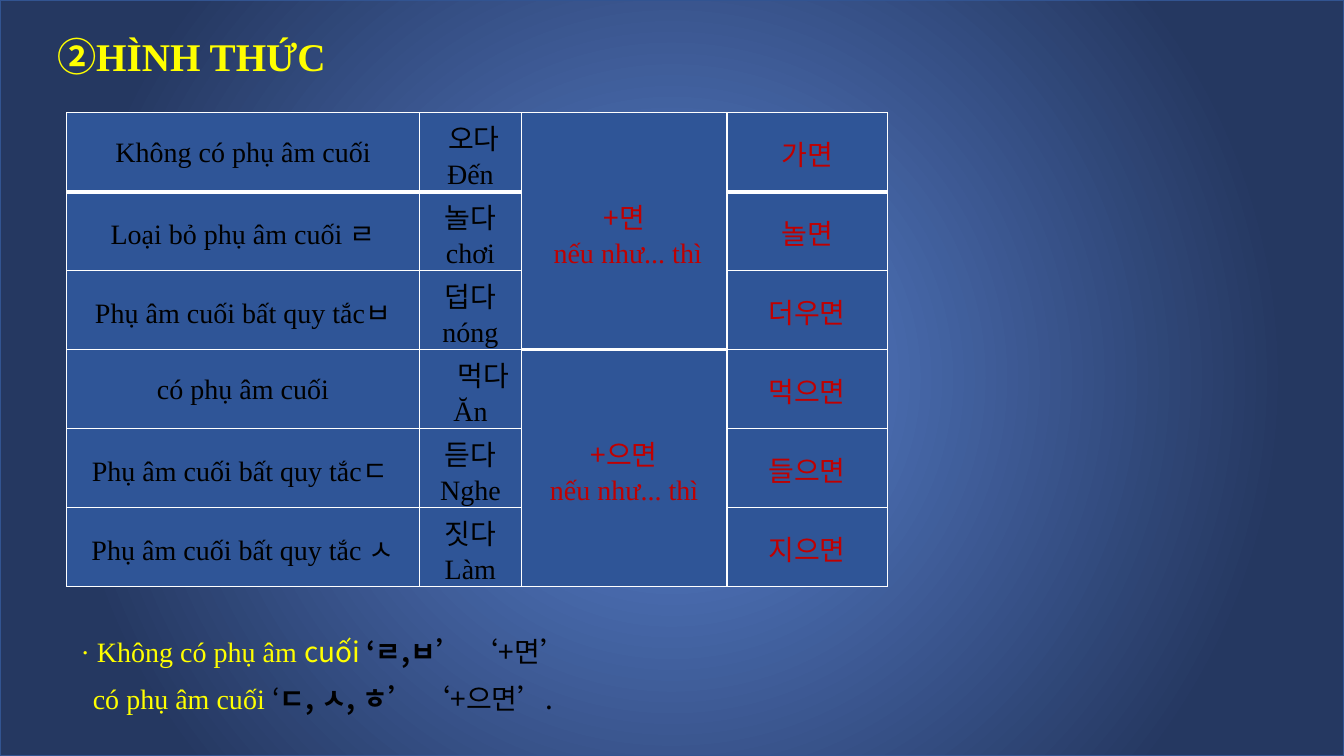
from lxml.etree import SubElement
from pptx import Presentation
from pptx.dml.color import RGBColor
from pptx.enum.shapes import MSO_SHAPE as Shape
from pptx.enum.text import MSO_ANCHOR as Anchor, MSO_AUTO_SIZE as AutoSize, PP_ALIGN as Align
from pptx.oxml.ns import qn
from pptx.util import Cm, Pt

YELLOW = RGBColor(0xFF, 0xFF, 0x00)
BLACK = RGBColor(0x00, 0x00, 0x00)
RED = RGBColor(0xC0, 0x00, 0x00)
WHITE = RGBColor(0xFF, 0xFF, 0xFF)
CELL_BLUE = RGBColor(0x2F, 0x55, 0x97)
EDGE_BLUE = RGBColor(0x32, 0x54, 0x91)
GLOW = RGBColor(0x5A, 0x83, 0xD3)
NAVY = RGBColor(0x25, 0x38, 0x61)
VI, KO = "Times New Roman", "Noto Sans CJK KR"

# Content: a line is (first-line indent in cm, runs); a run is (text, font, colour, bold)
title = [(0, [("②", KO, YELLOW, True), ("HÌNH THỨC", VI, YELLOW, True)])]

# Rule as (Vietnamese, final consonant), example lines, result
rows = [
    (("Không có phụ âm cuối", ""), [(0.18, [("오다", KO)]), (0, [("Đến", VI)])], "가면"),
    (("Loại bỏ phụ âm cuối ", "ㄹ"), [(0, [("놀다", KO)]), (0, [("chơi", VI)])], "놀면"),
    (("Phụ âm cuối bất quy tắc", "ㅂ"), [(0, [("덥다", KO)]), (0, [("nóng", VI)])], "더우면"),
    (("có phụ âm cuối", ""), [(0.64, [("먹다", KO), ("Ăn", VI)])], "먹으면"),
    (("Phụ âm cuối bất quy tắc", "ㄷ "), [(0, [("듣다", KO)]), (0, [("Nghe", VI)])], "들으면"),
    (("Phụ âm cuối bất quy tắc ", "ㅅ"), [(0, [("짓다", KO)]), (0, [("Làm", VI)])], "지으면"),
]
endings = [("+면", 0.18), ("+으면", 0)]
meaning = "nếu như... thì"

summary = [
    (-1.27, [("· Không có phụ âm ", VI, YELLOW, False), ("cuối ", KO, YELLOW, False),
             ("‘ㄹ,ㅂ’", KO, BLACK, True), (" ‘+면’ ", KO, BLACK, False)]),
    (-0.96, [("có phụ âm cuối ", VI, YELLOW, False), ("‘", KO, BLACK, False),
             ("ㄷ, ㅅ, ㅎ’", KO, BLACK, True), (" ‘+으면’.", KO, BLACK, False)]),
]

# Layout
SLIDE_W, SLIDE_H = Cm(33.87), Cm(19.05)
COLUMN_WIDTHS = [8.89, 2.57, 5.18, 4.04]
ROW_HEIGHT = 1.99
GROUP = len(rows) // len(endings)
ENDING_COL = 2


def write(frame, lines, size, align, left=0, after=0):
    for i, (indent, runs) in enumerate(lines):
        para = frame.paragraphs[0] if i == 0 else frame.add_paragraph()
        para.alignment, para.line_spacing, para.space_after = align, 1.07, Pt(after)
        props = para._p.get_or_add_pPr()
        props.set("marL", str(Cm(left)))
        props.set("indent", str(Cm(indent)))
        for text, font, color, bold in runs:
            run = para.add_run()
            run.text = text
            run.font.size, run.font.bold, run.font.name = Pt(size), bold, font
            run.font.color.rgb = color
            SubElement(run._r.get_or_add_rPr(), qn("a:ea"), typeface=font)


def add_text(left, top, width, height, lines, size, wrap, indent=0):
    frame = slide.shapes.add_textbox(Cm(left), Cm(top), Cm(width), Cm(height)).text_frame
    frame.word_wrap = wrap
    frame.auto_size = AutoSize.SHAPE_TO_FIT_TEXT
    write(frame, lines, size, Align.JUSTIFY, indent, 8)


def fill_cell(cell, lines, color):
    cell.vertical_anchor = Anchor.MIDDLE
    cell.margin_left = cell.margin_right = Cm(0.18)
    cell.margin_top = cell.margin_bottom = 0
    colored = [(indent, [(*run, color, False) for run in runs if run[0]]) for indent, runs in lines]
    write(cell.text_frame, colored, 20, Align.CENTER)


def style_cell(cell, top, bottom):
    props = cell._tc.get_or_add_tcPr()
    for side, width in (("L", 1), ("R", 1), ("T", top), ("B", bottom)):
        line = SubElement(props, qn("a:ln" + side), w=str(Pt(width)))
        SubElement(SubElement(line, qn("a:solidFill")), qn("a:srgbClr"), val=str(WHITE))
    cell.fill.solid()
    cell.fill.fore_color.rgb = CELL_BLUE


prs = Presentation()
prs.slide_width, prs.slide_height = SLIDE_W, SLIDE_H
slide = prs.slides.add_slide(prs.slide_layouts[6])

# Backdrop with a round glow
backdrop = slide.shapes.add_shape(Shape.RECTANGLE, 0, 0, SLIDE_W, SLIDE_H)
backdrop.shadow.inherit = False
backdrop.line.color.rgb = EDGE_BLUE
backdrop.line.width = Pt(1)
backdrop.fill.gradient()
for stop, color, position in zip(backdrop.fill.gradient_stops, (GLOW, NAVY), (0, 0.8)):
    stop.color.rgb = color
    stop.position = position
gradient = backdrop._element.spPr.find(qn("a:gradFill"))
gradient.remove(gradient.find(qn("a:lin")))
circle = SubElement(gradient, qn("a:path"), {"path": "circle"})
SubElement(circle, qn("a:fillToRect"), dict.fromkeys("ltrb", "50000"))

add_text(1.19, 0.61, 7.34, 1.45, title, 28, False)

# Conjugation table
table = slide.shapes.add_table(len(rows), len(COLUMN_WIDTHS), Cm(1.68), Cm(2.84),
                               Cm(sum(COLUMN_WIDTHS)), Cm(ROW_HEIGHT * len(rows))).table
table.first_row = table.horz_banding = False
for column, width in zip(table.columns, COLUMN_WIDTHS):
    column.width = Cm(width)
for r, ((rule, consonant), example, result) in enumerate(rows):
    table.rows[r].height = Cm(ROW_HEIGHT)
    fill_cell(table.cell(r, 0), [(0, [(rule, VI), (consonant, KO)])], BLACK)
    fill_cell(table.cell(r, 1), example, BLACK)
    fill_cell(table.cell(r, 3), [(0, [(result, KO)])], RED)
    for c in range(len(COLUMN_WIDTHS)):
        # The heavy rule runs below the first block of each column
        block = GROUP if c == ENDING_COL else 1
        heavy_bottom = r < block
        style_cell(table.cell(r, c), 3 if r == block else 1, 3 if heavy_bottom else 1)
for g, (ending, indent) in enumerate(endings):
    first = table.cell(g * GROUP, ENDING_COL)
    first.merge(table.cell((g + 1) * GROUP - 1, ENDING_COL))
    fill_cell(first, [(0, [(ending, KO)]), (indent, [(meaning, VI)])], RED)

# Summary
add_text(1.78, 15.8, 26.92, 2.36, summary, 20, True, 1.27)

prs.save("out.pptx")
